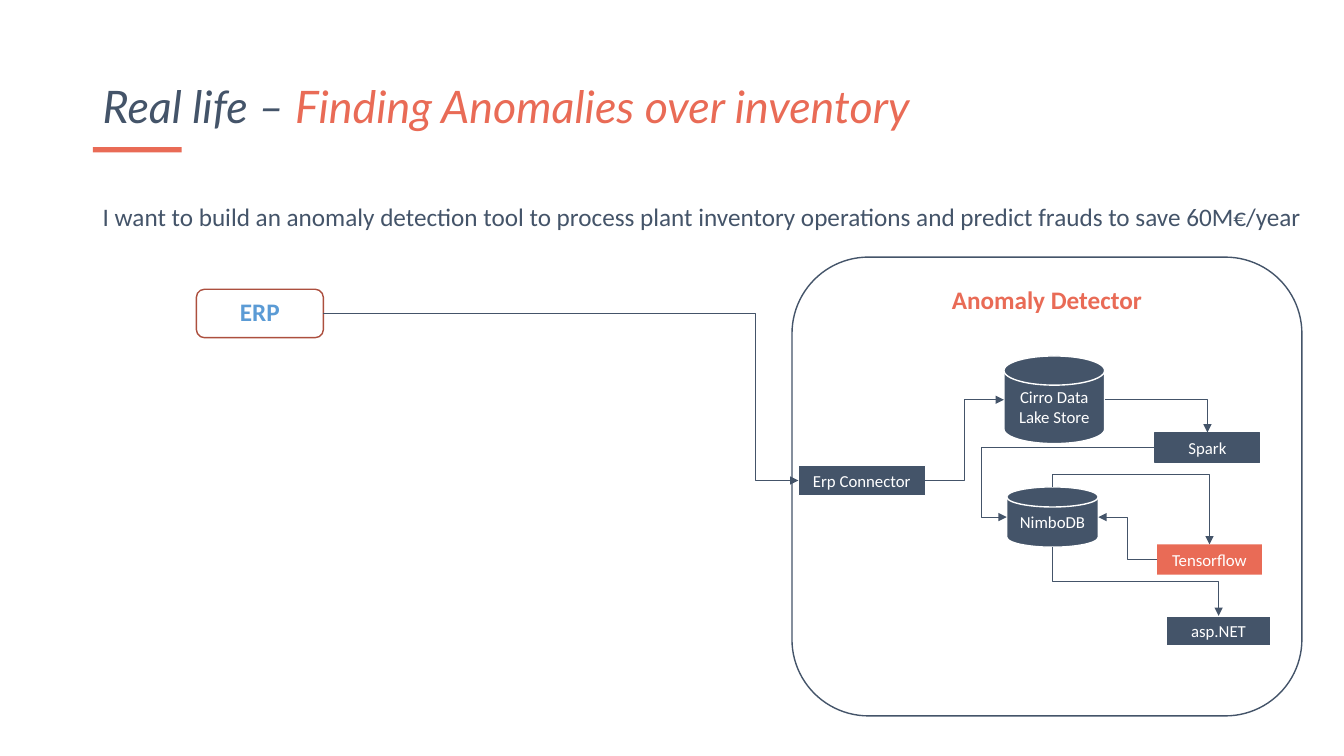
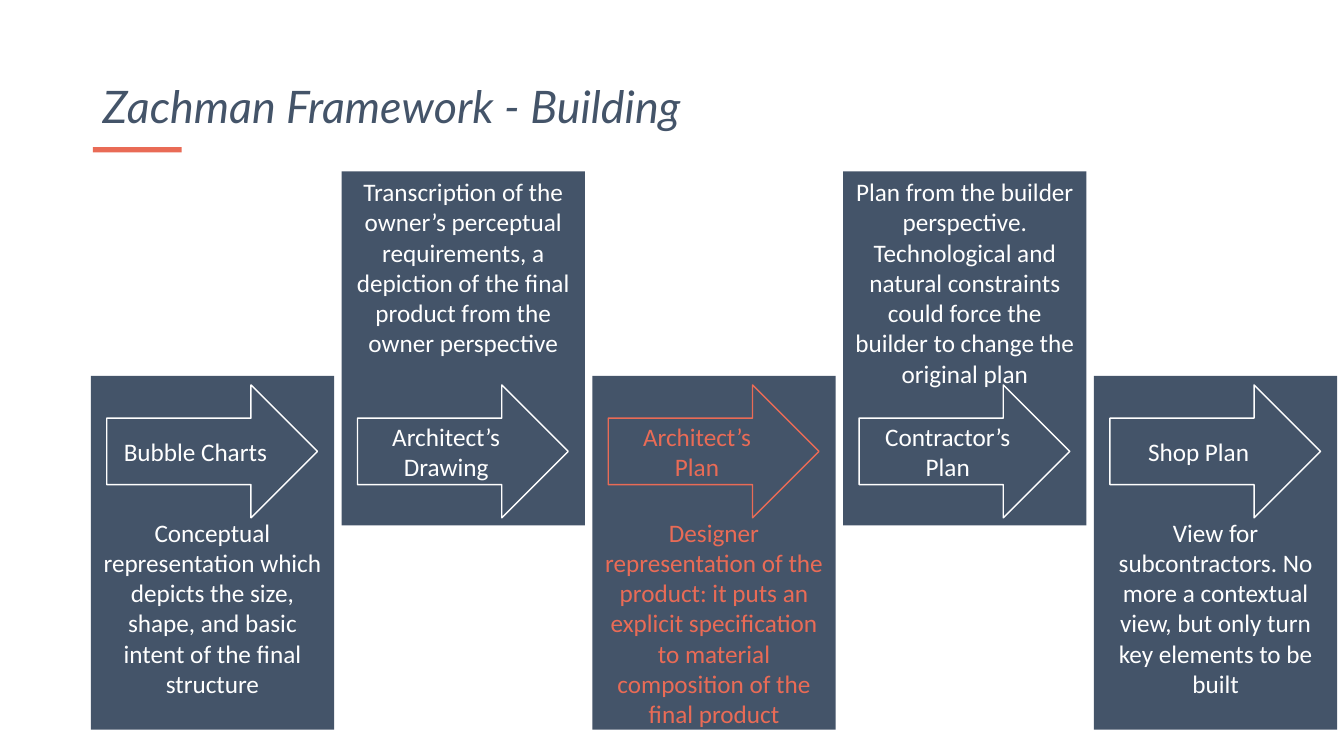
"""Builds two slides: an anomaly detection architecture and the Zachman building views."""
from dataclasses import dataclass
from enum import Enum
from typing import Optional

from lxml.etree import SubElement
from pptx import Presentation
from pptx.dml.color import RGBColor
from pptx.enum.shapes import MSO_CONNECTOR, MSO_SHAPE as SHAPE
from pptx.enum.text import MSO_ANCHOR as ANCHOR, PP_ALIGN as ALIGN
from pptx.oxml.ns import qn
from pptx.util import Cm, Pt

NAVY = RGBColor(0x44, 0x54, 0x69)
CORAL = RGBColor(0xE9, 0x6B, 0x56)
BRICK = RGBColor(0xAC, 0x4F, 0x3E)
BLUE = RGBColor(0x5B, 0x9B, 0xD5)
WHITE = RGBColor(0xFF, 0xFF, 0xFF)

BODY_FONT = "Calibri"
TITLE_FONT = "Lato"
MARGIN = 2.34
BOX_H = 0.76

COLUMN_LEFT, COLUMN_PITCH = 2.29, 6.32
COLUMN_W, COLUMN_H = 6.13, 8.92
UPPER_TOP, LOWER_TOP = 4.32, 9.47
LOWER_INSET = 3.56
ARROW_INDENT, ARROW_TOP = 0.4, 9.7
ARROW_W, ARROW_H = 5.31, 3.35


class Side(Enum):
    """Connection sites of a rectangle, with the place of each on its outline."""
    TOP = (0, 0.5, 0)
    LEFT = (1, 0, 0.5)
    BOTTOM = (2, 0.5, 1)
    RIGHT = (3, 1, 0.5)


@dataclass
class Node:
    """A labelled shape, measured in centimetres."""
    text: str
    left: float
    top: float
    width: float
    height: float
    kind: SHAPE = SHAPE.RECTANGLE
    fill: Optional[RGBColor] = NAVY
    line: Optional[RGBColor] = WHITE
    color: RGBColor = WHITE
    size: int = 12
    bold: bool = False
    anchor: ANCHOR = ANCHOR.MIDDLE
    top_inset: Optional[float] = None


@dataclass
class Link:
    """An elbow arrow between the sides of two nodes."""
    start: str
    start_side: Side
    end: str
    end_side: Side
    bend: Optional[float] = 0.5
    rotation: int = 0


@dataclass
class View:
    """A column of the framework."""
    name: str
    description: str
    color: RGBColor = WHITE


NODES = {
    "source": Node("ERP", 4.95, 7.29, 3.2, 1.22, SHAPE.ROUNDED_RECTANGLE, None,
                   BRICK, BLUE, 18, True, ANCHOR.TOP),
    "detector": Node("Anomaly Detector", 19.96, 6.48, 12.85, 11.56,
                     SHAPE.ROUNDED_RECTANGLE, None, NAVY, CORAL, 18, True, ANCHOR.TOP),
    "lake": Node("Cirro Data Lake Store", 25.3, 8.97, 2.54, 2.21,
                 SHAPE.FLOWCHART_MAGNETIC_DISK),
    "web": Node("asp.NET", 29.39, 15.52, 2.64, BOX_H),
    "spark": Node("Spark", 29.11, 10.9, 2.64, BOX_H, line=NAVY),
    "model": Node("Tensorflow", 29.16, 13.72, 2.64, BOX_H, fill=CORAL, line=None),
    "database": Node("NimboDB", 25.37, 12.27, 2.31, 1.52, SHAPE.FLOWCHART_MAGNETIC_DISK),
    "connector": Node("Erp Connector", 20.12, 11.73, 3.2, BOX_H),
}

LINKS = [
    Link("source", Side.RIGHT, "connector", Side.LEFT, 0.91),
    Link("connector", Side.RIGHT, "lake", Side.LEFT),
    Link("lake", Side.RIGHT, "spark", Side.TOP, None),
    Link("spark", Side.LEFT, "database", Side.LEFT, 1.17, 180),
    Link("database", Side.TOP, "model", Side.TOP, -0.21, 270),
    Link("model", Side.LEFT, "database", Side.RIGHT, 0.5, 180),
    Link("database", Side.BOTTOM, "web", Side.TOP, 0.5, 270),
]

VIEWS = [
    View("Bubble Charts", "Conceptual representation which depicts the size, shape, "
         "and basic intent of the final structure"),
    View("Architect’s Drawing", "Transcription of the owner’s perceptual requirements, "
         "a depiction of the final product from the owner perspective"),
    View("Architect’s Plan", "Designer representation of the product: it puts an explicit "
         "specification to material composition of the final product", CORAL),
    View("Contractor’s Plan", "Plan from the builder perspective. Technological and natural "
         "constraints could force the builder to change the original plan"),
    View("Shop Plan", "View for subcontractors. No more a contextual view, but only turn "
         "key elements to be built"),
]


def style_run(r, size: int, color: RGBColor, font: str = BODY_FONT,
              bold: bool = False, italic: bool = False) -> None:
    """Format a run."""
    r.font.name, r.font.size = font, Pt(size)
    r.font.bold, r.font.italic = bold, italic
    r.font.color.rgb = color


def draw_node(shapes, node: Node):
    """Draw a node and return its shape."""
    sp = shapes.add_shape(node.kind, Cm(node.left), Cm(node.top),
                          Cm(node.width), Cm(node.height))
    sp.shadow.inherit = False
    if node.fill is None:
        sp.fill.background()
    else:
        sp.fill.solid()
        sp.fill.fore_color.rgb = node.fill
    if node.line is None:
        sp.line.fill.background()
    else:
        sp.line.color.rgb = node.line
        sp.line.width = Pt(1)
    tf = sp.text_frame
    tf.word_wrap = True
    tf.vertical_anchor = node.anchor
    if node.top_inset is not None:
        tf.margin_top = Cm(node.top_inset)
    if node.text:
        tf.text = node.text
        p = tf.paragraphs[0]
        p.alignment = ALIGN.CENTER
        style_run(p.runs[0], node.size, node.color, bold=node.bold)
    return sp


def site_point(sp, side: Side) -> tuple[int, int]:
    """Return the position of a connection site."""
    _, across, down = side.value
    return int(sp.left + sp.width * across), int(sp.top + sp.height * down)


def glue(cxn, tag: str, sp, side: Side) -> None:
    """Join a connector end to a shape; a disk has one more site, before its top."""
    extra = sp.auto_shape_type == SHAPE.FLOWCHART_MAGNETIC_DISK
    props = cxn._element.find(".//" + qn("p:cNvCxnSpPr"))
    SubElement(props, qn(tag), id=str(sp.shape_id), idx=str(side.value[0] + extra))


def turn(cxn, rotation: int) -> None:
    """Rotate an elbow while keeping both of its ends in place."""
    xfrm = cxn._element.spPr.find(qn("a:xfrm"))
    xfrm.set("rot", str(rotation * 60000))
    if rotation == 180:
        xfrm.flipH, xfrm.flipV = not xfrm.flipH, not xfrm.flipV
    else:
        shift = (cxn.width - cxn.height) // 2
        cxn.left, cxn.top = cxn.left + shift, cxn.top - shift
        cxn.width, cxn.height = cxn.height, cxn.width
        xfrm.flipH = True


def draw_link(shapes, link: Link, drawn: dict) -> None:
    """Draw an elbow arrow."""
    start, end = drawn[link.start], drawn[link.end]
    cxn = shapes.add_connector(MSO_CONNECTOR.ELBOW, *site_point(start, link.start_side),
                               *site_point(end, link.end_side))
    glue(cxn, "a:stCxn", start, link.start_side)
    glue(cxn, "a:endCxn", end, link.end_side)
    if link.rotation:
        turn(cxn, link.rotation)
    geom = cxn._element.spPr.find(qn("a:prstGeom"))
    if link.bend is None:
        geom.set("prst", "bentConnector2")
    else:
        SubElement(geom.find(qn("a:avLst")), qn("a:gd"), name="adj1",
                   fmla=f"val {round(link.bend * 100000)}")
    cxn.line.color.rgb = NAVY
    cxn.line.width = Pt(0.5)
    SubElement(cxn.line._get_or_add_ln(), qn("a:tailEnd"), type="triangle")
    SubElement(cxn._element.spPr, qn("a:effectLst"))


def add_text(slide, top: float, width: float, height: float):
    """Add a wrapping text box at the margin and return its text frame."""
    tf = slide.shapes.add_textbox(Cm(MARGIN), Cm(top), Cm(width), Cm(height)).text_frame
    tf.word_wrap = True
    return tf


def add_slide(prs, title: str, highlight: str = ""):
    """Add a blank slide with the shared title and accent bar."""
    slide = prs.slides.add_slide(prs.slide_layouts[6])
    draw_node(slide.shapes, Node("", MARGIN, 3.71, 2.24, 0.13, fill=CORAL, line=None))
    tf = add_text(slide, 0.46, 29.21, 3.02)
    tf.vertical_anchor = ANCHOR.BOTTOM
    p = tf.paragraphs[0]
    p.line_spacing, p.space_before = 0.9, Pt(10)
    for text, color in ((title, NAVY), (highlight, CORAL)):
        if text:
            r = p.add_run()
            r.text = text
            style_run(r, 32, color, TITLE_FONT, italic=True)
    return slide


def add_architecture(prs) -> None:
    """Build the anomaly detector slide."""
    slide = add_slide(prs, "Real life – ", "Finding Anomalies over inventory")
    tf = add_text(slide, 4.95, 31.01, 1.02)
    tf.text = ("I want to build an anomaly detection tool to process plant inventory "
               "operations and predict frauds to save 60M€/year")
    style_run(tf.paragraphs[0].runs[0], 18, NAVY)
    drawn = {key: draw_node(slide.shapes, node) for key, node in NODES.items()}
    for link in LINKS:
        draw_link(slide.shapes, link, drawn)


def add_framework(prs) -> None:
    """Build the slide of alternating columns."""
    slide = add_slide(prs, "Zachman Framework - Building")
    for i, view in enumerate(VIEWS):
        left = COLUMN_LEFT + i * COLUMN_PITCH
        upper = i % 2 == 1
        shapes = slide.shapes.add_group_shape().shapes
        draw_node(shapes, Node(view.description, left, UPPER_TOP if upper else LOWER_TOP,
                               COLUMN_W, COLUMN_H, line=None, color=view.color, size=18,
                               anchor=ANCHOR.TOP,
                               top_inset=None if upper else LOWER_INSET))
        draw_node(shapes, Node(view.name, left + ARROW_INDENT, ARROW_TOP, ARROW_W, ARROW_H,
                               SHAPE.RIGHT_ARROW, None, view.color, view.color, 18))


def main() -> None:
    """Build and save the presentation."""
    prs = Presentation()
    prs.slide_width, prs.slide_height = Cm(33.87), Cm(19.05)
    add_architecture(prs)
    add_framework(prs)
    prs.save("out.pptx")


if __name__ == "__main__":
    main()
